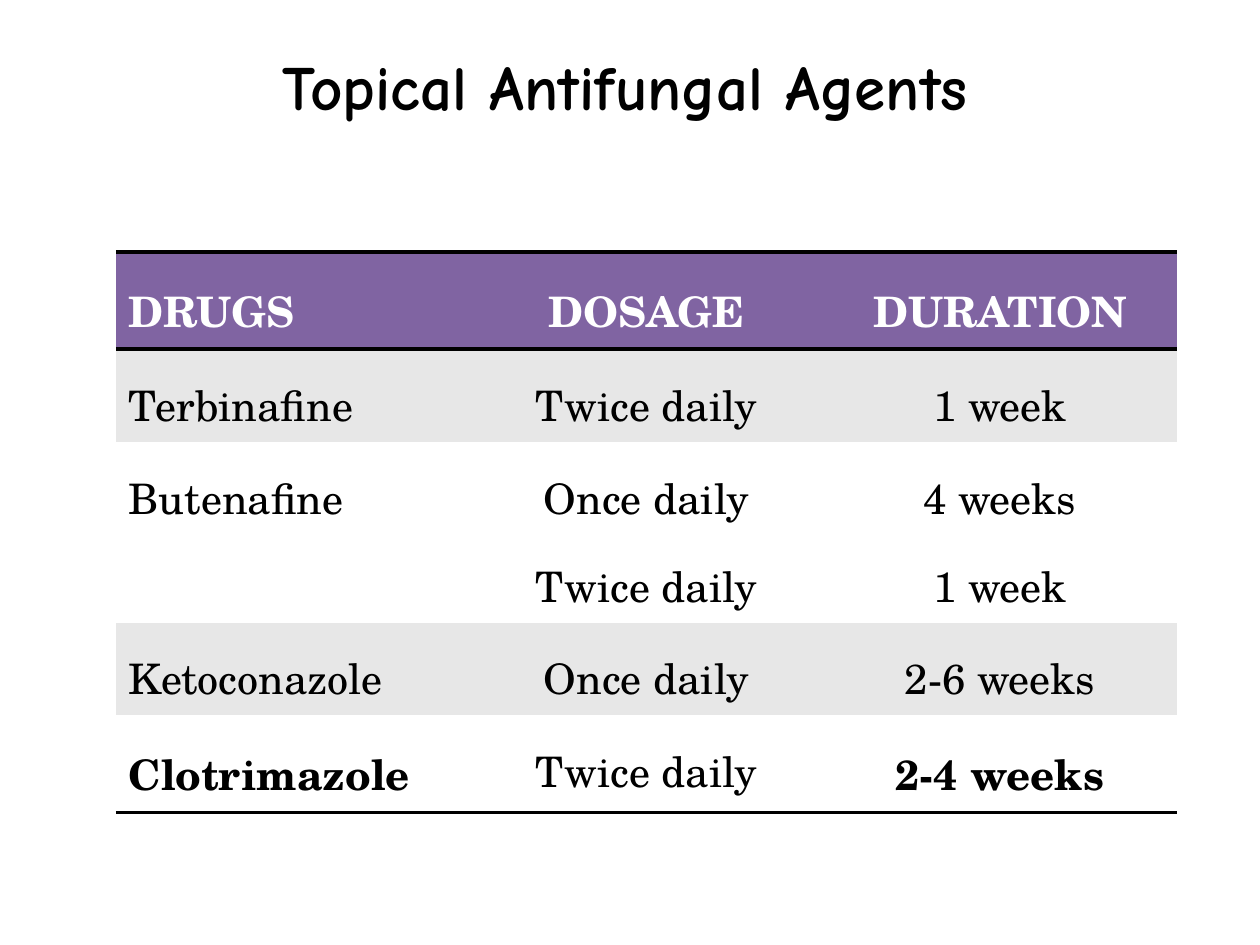
import pptx
import pptx.dml.color
import pptx.enum.text
import pptx.oxml.ns
import pptx.util
from lxml import etree
from pptx.util import Inches

BODY_FONT = "TeX Gyre Schola"
HEADINGS = ["DRUGS", "DOSAGE", "DURATION"]
REGIMENS = [
    ["Terbinafine", "Twice daily", "1 week"],
    ["Butenafine", "Once daily\nTwice daily", "4 weeks\n1 week"],
    ["Ketoconazole", "Once daily", "2-6 weeks"],
    ["Clotrimazole", "Twice daily", "2-4 weeks"],
]
ROW_HEIGHTS = [0.66, 0.68, 1.35, 0.66, 0.66]
EMPHASISED = HEADINGS + ["Clotrimazole", "2-4 weeks"]


def rgb(color):
    """Turn a hex string into a colour."""
    return pptx.dml.color.RGBColor.from_string(color)


def add_run(paragraph, text, font, size, color, bold):
    """Append one formatted run to a paragraph."""
    run = paragraph.add_run()
    run.text = text
    run.font.name = font
    run.font.size = pptx.util.Pt(size)
    run.font.bold = bold
    run.font.color.rgb = rgb(color)


def set_borders(cell, ruled_sides):
    """Draw a 2 pt black rule on the given sides and clear the others."""
    properties = cell._tc.get_or_add_tcPr()
    qn = pptx.oxml.ns.qn
    for side in "LRTB":
        border = etree.SubElement(properties, qn(f"a:ln{side}"))
        if side in ruled_sides:
            border.set("w", str(pptx.util.Pt(2)))
            fill = etree.SubElement(border, qn("a:solidFill"))
            etree.SubElement(fill, qn("a:srgbClr"), val="000000")
        else:
            border.set("w", "0")
            etree.SubElement(border, qn("a:noFill"))


def fill_cell(cell, text, centred, background, color):
    """Write a cell's lines and set its background."""
    cell.fill.solid()
    cell.fill.fore_color.rgb = rgb(background)
    frame = cell.text_frame
    for index, line in enumerate(text.split("\n")):
        paragraph = frame.add_paragraph() if index else frame.paragraphs[0]
        if centred:
            paragraph.alignment = pptx.enum.text.PP_ALIGN.CENTER
        paragraph.line_spacing = 1.3
        paragraph.space_before = pptx.util.Pt(4.8)
        add_run(paragraph, line, BODY_FONT, 24, color, text in EMPHASISED)


def add_title(slide, text):
    """Add the centred slide title."""
    title = slide.shapes.add_textbox(Inches(0.42), Inches(0.33), Inches(9.08), Inches(0.71))
    title.text_frame.word_wrap = True
    title.text_frame.auto_size = pptx.enum.text.MSO_AUTO_SIZE.SHAPE_TO_FIT_TEXT
    paragraph = title.text_frame.paragraphs[0]
    paragraph.alignment = pptx.enum.text.PP_ALIGN.CENTER
    add_run(paragraph, text, "Comic Neue", 36, "000000", True)


def add_regimen_table(slide):
    """Add the banded table of drugs, dosages and durations."""
    rows = [HEADINGS] + REGIMENS
    table = slide.shapes.add_table(
        len(rows), len(HEADINGS), Inches(0.92), Inches(2), Inches(8.42), Inches(sum(ROW_HEIGHTS))
    ).table
    for row, height in zip(table.rows, ROW_HEIGHTS):
        row.height = Inches(height)
    for r, texts in enumerate(rows):
        ruled_sides = ("T" if r < 2 else "") + ("B" if r in (0, len(rows) - 1) else "")
        background = "8064A2" if r == 0 else "E7E7E7" if r % 2 else "FFFFFF"
        color = "000000" if r else "FFFFFF"
        for c, text in enumerate(texts):
            cell = table.cell(r, c)
            set_borders(cell, ruled_sides)
            fill_cell(cell, text, c > 0, background, color)


def main():
    """Build and save the slide."""
    deck = pptx.Presentation()
    deck.slide_width, deck.slide_height = Inches(10), Inches(7.5)
    slide = deck.slides.add_slide(deck.slide_layouts[6])
    add_regimen_table(slide)
    add_title(slide, "Topical Antifungal Agents")
    deck.save("out.pptx")


if __name__ == "__main__":
    main()
